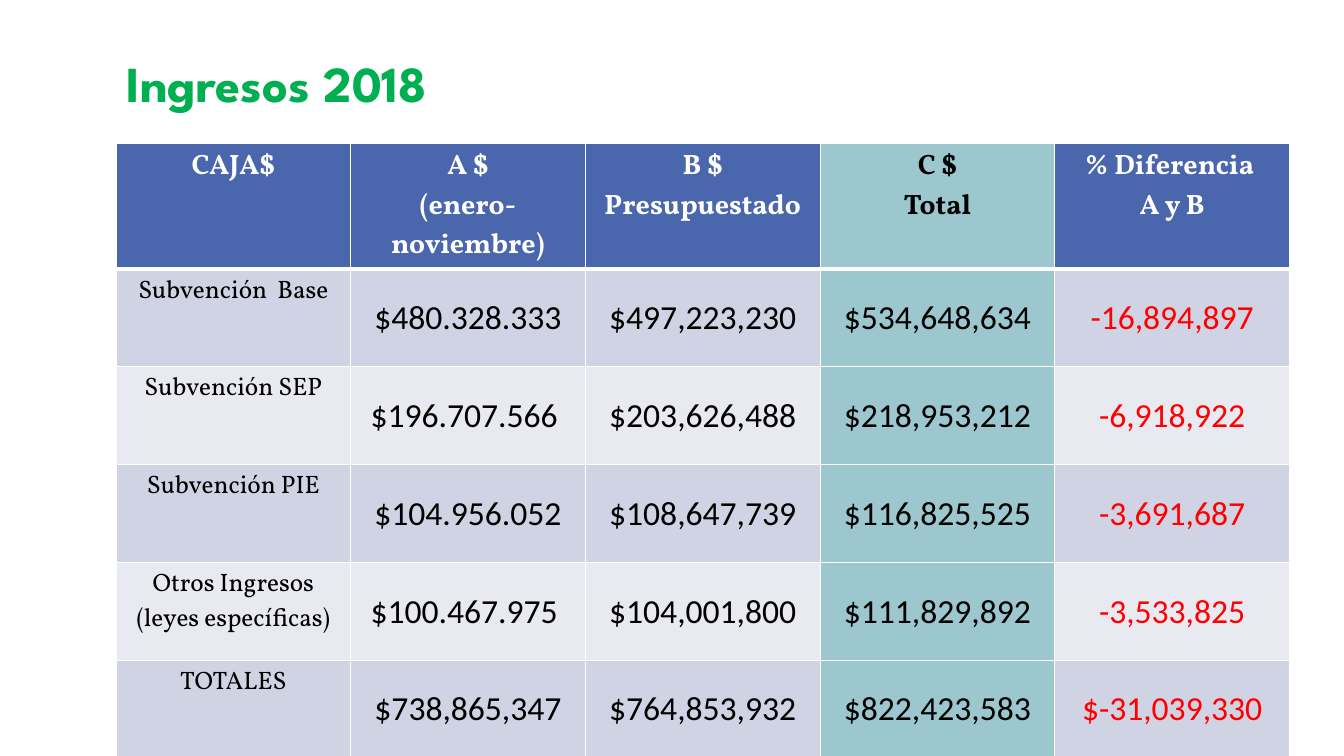
from dataclasses import dataclass

from lxml.etree import SubElement
from pptx import Presentation
from pptx.dml.color import RGBColor
from pptx.enum.text import MSO_ANCHOR, PP_ALIGN
from pptx.oxml.ns import qn
from pptx.slide import Slide
from pptx.table import _Cell
from pptx.util import Inches, Pt

WHITE = RGBColor(0xFF, 0xFF, 0xFF)
BLACK = RGBColor(0x00, 0x00, 0x00)
GREEN = RGBColor(0x00, 0xB0, 0x50)
RED = RGBColor(0xFF, 0x00, 0x00)
BLUE = RGBColor(0x4A, 0x66, 0xAC)
TEAL = RGBColor(0x9C, 0xC7, 0xCE)
BAND_DARK = RGBColor(0xD0, 0xD3, 0xE3)
BAND_LIGHT = RGBColor(0xE9, 0xEA, 0xF1)

TOTAL_COLUMN = 3
DIFFERENCE_COLUMN = 4
HEADER_HEIGHT = 1.25
ROW_HEIGHT = 0.97

INCOME_ROWS = [
    ["CAJA$", "A $\n(enero-noviembre)", "B $\nPresupuestado", "C $\vTotal", "% Diferencia \vA y B"],
    ["Subvención  Base", " $480.328.333 ", "$497,223,230", "$534,648,634", "-16,894,897"],
    ["Subvención SEP", "$196.707.566 ", "$203,626,488", "$218,953,212", "-6,918,922"],
    ["Subvención PIE", " $104.956.052 ", "$108,647,739", "$116,825,525", "-3,691,687"],
    ["Otros Ingresos (leyes específicas)", "$100.467.975 ", "$104,001,800", "$111,829,892", "-3,533,825"],
    ["TOTALES", "$738,865,347", "$764,853,932", "$822,423,583", "$-31,039,330"],
]


@dataclass(frozen=True)
class CellStyle:
    font: str
    size: int
    color: RGBColor
    fill: RGBColor
    bold: bool = False
    amount: bool = False


def choose_style(row: int, column: int) -> CellStyle:
    is_total = column == TOTAL_COLUMN
    if row == 0:
        return CellStyle("Vollkorn", 20, BLACK if is_total else WHITE, TEAL if is_total else BLUE, bold=True)
    band = BAND_DARK if row % 2 else BAND_LIGHT
    if column == 0:
        return CellStyle("Vollkorn", 18, BLACK, band)
    color = RED if column == DIFFERENCE_COLUMN else BLACK
    return CellStyle("Calibri", 24, color, TEAL if is_total else band, amount=True)


def set_borders(cell: _Cell, row: int) -> None:
    properties = cell._tc.get_or_add_tcPr()
    widths = {"L": 1, "R": 1, "T": 3 if row == 1 else 1, "B": 3 if row == 0 else 1}
    for side, width in widths.items():
        line = SubElement(properties, qn(f"a:ln{side}"), w=str(Pt(width)))
        fill = SubElement(line, qn("a:solidFill"))
        SubElement(fill, qn("a:srgbClr"), val=str(WHITE))


def fill_cell(cell: _Cell, text: str, style: CellStyle) -> None:
    cell.fill.solid()
    cell.fill.fore_color.rgb = style.fill
    if style.amount:
        cell.vertical_anchor = MSO_ANCHOR.MIDDLE
        cell.margin_left = cell.margin_top = cell.margin_right = Inches(0.01)
        cell.margin_bottom = Inches(0)
    cell.text_frame.text = text
    for para in cell.text_frame.paragraphs:
        para.alignment = PP_ALIGN.CENTER
        for span in para.runs:
            span.font.name = style.font
            span.font.size = Pt(style.size)
            span.font.bold = style.bold
            span.font.color.rgb = style.color


def add_title(page: Slide) -> None:
    box = page.shapes.add_textbox(Inches(1.16), Inches(0), Inches(9.5), Inches(1.16))
    frame = box.text_frame
    frame.word_wrap = True
    frame.vertical_anchor = MSO_ANCHOR.BOTTOM
    frame.text = "Ingresos 2018"
    para = frame.paragraphs[0]
    para.line_spacing = 0.8
    font = para.runs[0].font
    font.name = "League Spartan"
    font.size = Pt(36)
    font.bold = True
    font.color.rgb = GREEN


def add_income_table(page: Slide) -> None:
    row_count, column_count = len(INCOME_ROWS), len(INCOME_ROWS[0])
    height = HEADER_HEIGHT + ROW_HEIGHT * (row_count - 1)
    table = page.shapes.add_table(
        row_count, column_count, Inches(1.15), Inches(1.42), Inches(11.64), Inches(height)
    ).table
    for row, texts in enumerate(INCOME_ROWS):
        table.rows[row].height = Inches(ROW_HEIGHT if row else HEADER_HEIGHT)
        for column, text in enumerate(texts):
            cell = table.cell(row, column)
            set_borders(cell, row)
            fill_cell(cell, text, choose_style(row, column))


def main() -> None:
    deck = Presentation()
    deck.slide_width = Inches(13.33)
    deck.slide_height = Inches(7.5)
    page = deck.slides.add_slide(deck.slide_layouts[6])
    add_title(page)
    add_income_table(page)
    deck.save("out.pptx")


if __name__ == "__main__":
    main()
